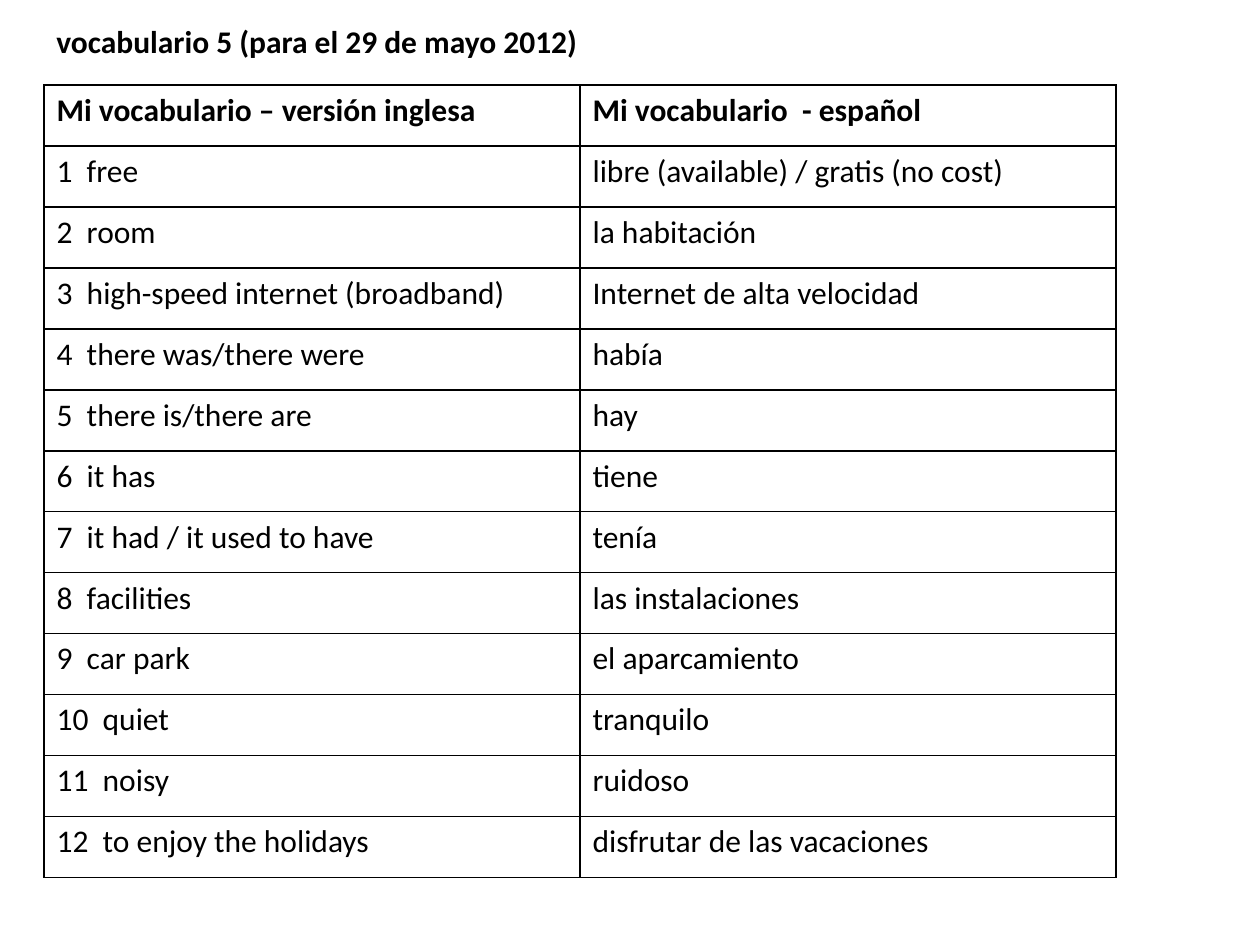
from dataclasses import dataclass

from lxml.etree import SubElement
from pptx import Presentation
from pptx.dml.color import RGBColor
from pptx.oxml import parse_xml
from pptx.oxml.ns import nsdecls, qn
from pptx.table import _Cell
from pptx.text.text import TextFrame
from pptx.util import Emu, Pt

SCALE = 914400 / 126
BLACK = "000000"
LEFT, TOP = 44, 85
WIDTH, HEIGHT = 536, 61


@dataclass
class Entry:
    english: str
    spanish: str


HEAD = Entry("Mi vocabulario – versión inglesa", "Mi vocabulario  - español")
WORDS = [
    Entry("free", "libre (available) / gratis (no cost)"),
    Entry("room", "la habitación"),
    Entry("high-speed internet (broadband)", "Internet de alta velocidad"),
    Entry("there was/there were", "había"),
    Entry("there is/there are", "hay"),
    Entry("it has", "tiene"),
    Entry("it had / it used to have", "tenía"),
    Entry("facilities", "las instalaciones"),
    Entry("car park", "el aparcamiento"),
    Entry("quiet", "tranquilo"),
    Entry("noisy", "ruidoso"),
    Entry("to enjoy the holidays", "disfrutar de las vacaciones"),
]


def px(value: int) -> Emu:
    return Emu(round(value * SCALE))


def color(code: str) -> RGBColor:
    return RGBColor.from_string(code)


def write(frame: TextFrame, text: str, *, size: int = 18, bold: bool = False,
          font: str = "Calibri", ink: str = BLACK) -> None:
    run = frame.paragraphs[0].add_run()
    run.text = text
    run.font.name = font
    run.font.size = Pt(size)
    run.font.bold = bold
    run.font.color.rgb = color(ink)


def border(cell: _Cell, ink: str = BLACK, width: int = 1) -> None:
    props = cell._tc.get_or_add_tcPr()
    for index, side in enumerate(("lnL", "lnR", "lnT", "lnB")):
        line = parse_xml(f'<a:{side} {nsdecls("a")} w="{Pt(width)}"/>')
        fill = SubElement(line, qn("a:solidFill"))
        SubElement(fill, qn("a:srgbClr"), val=ink)
        props.insert(index, line)


def draw_cell(cell: _Cell, text: str, bold: bool) -> None:
    cell.fill.background()
    border(cell)
    write(cell.text_frame, text, bold=bold)


def main() -> None:
    deck = Presentation()
    deck.slide_width, deck.slide_height = px(1260), px(945)
    slide = deck.slides.add_slide(deck.slide_layouts[6])

    rows = [HEAD] + [Entry(f"{number}  {word.english}", word.spanish)
                     for number, word in enumerate(WORDS, 1)]
    table = slide.shapes.add_table(
        len(rows), 2, px(LEFT), px(TOP),
        px(2 * WIDTH), px(len(rows) * HEIGHT)).table
    table.first_row = table.horz_banding = False
    for column in table.columns:
        column.width = px(WIDTH)
    for index, entry in enumerate(rows):
        table.rows[index].height = px(HEIGHT)
        for side, text in enumerate((entry.english, entry.spanish)):
            draw_cell(table.cell(index, side), text, entry is HEAD)

    title = slide.shapes.add_textbox(px(LEFT), px(16), px(1201), px(51))
    title.text_frame.word_wrap = True
    write(title.text_frame, "vocabulario 5 (para el 29 de mayo 2012)", bold=True)
    deck.save("out.pptx")


if __name__ == "__main__":
    main()
